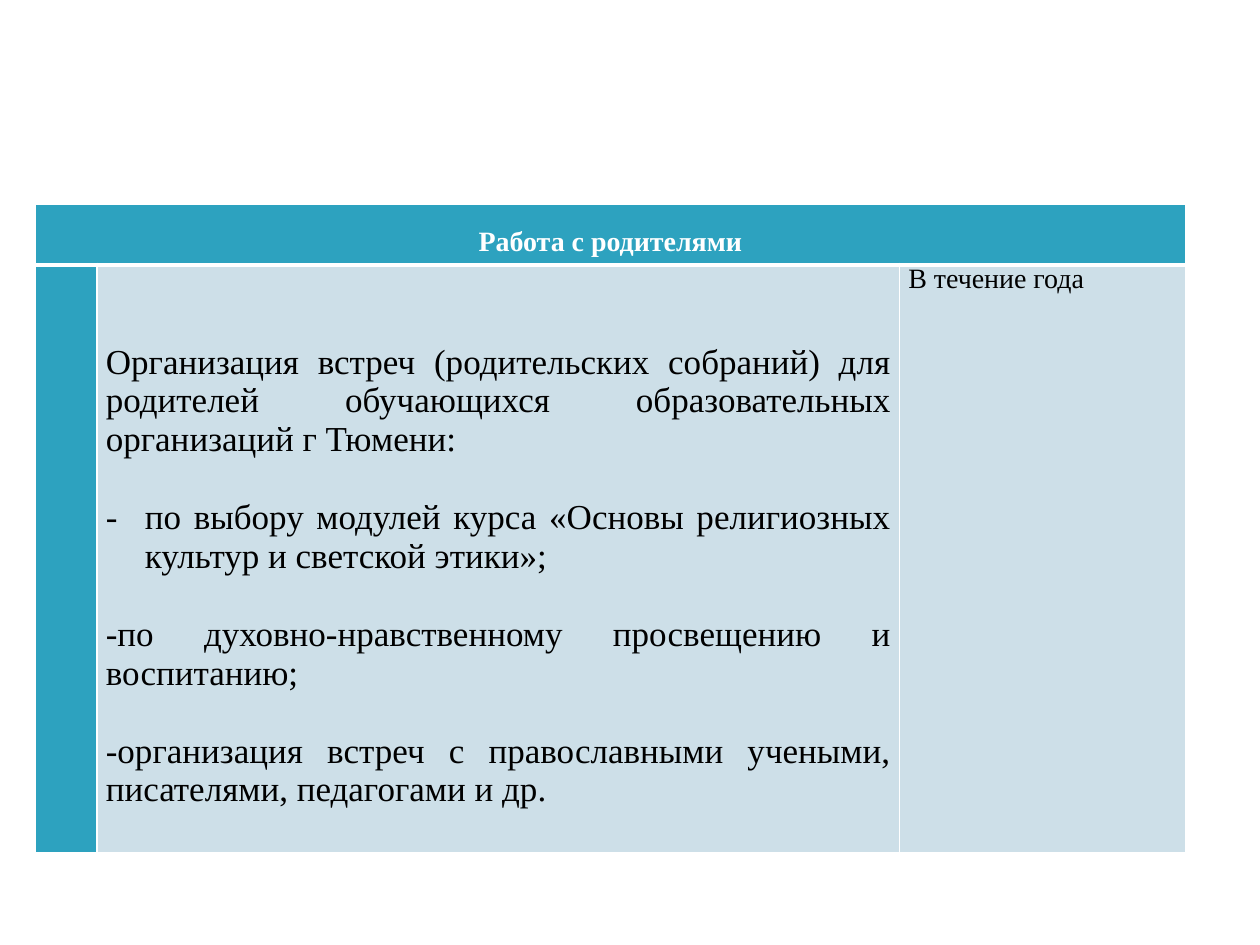
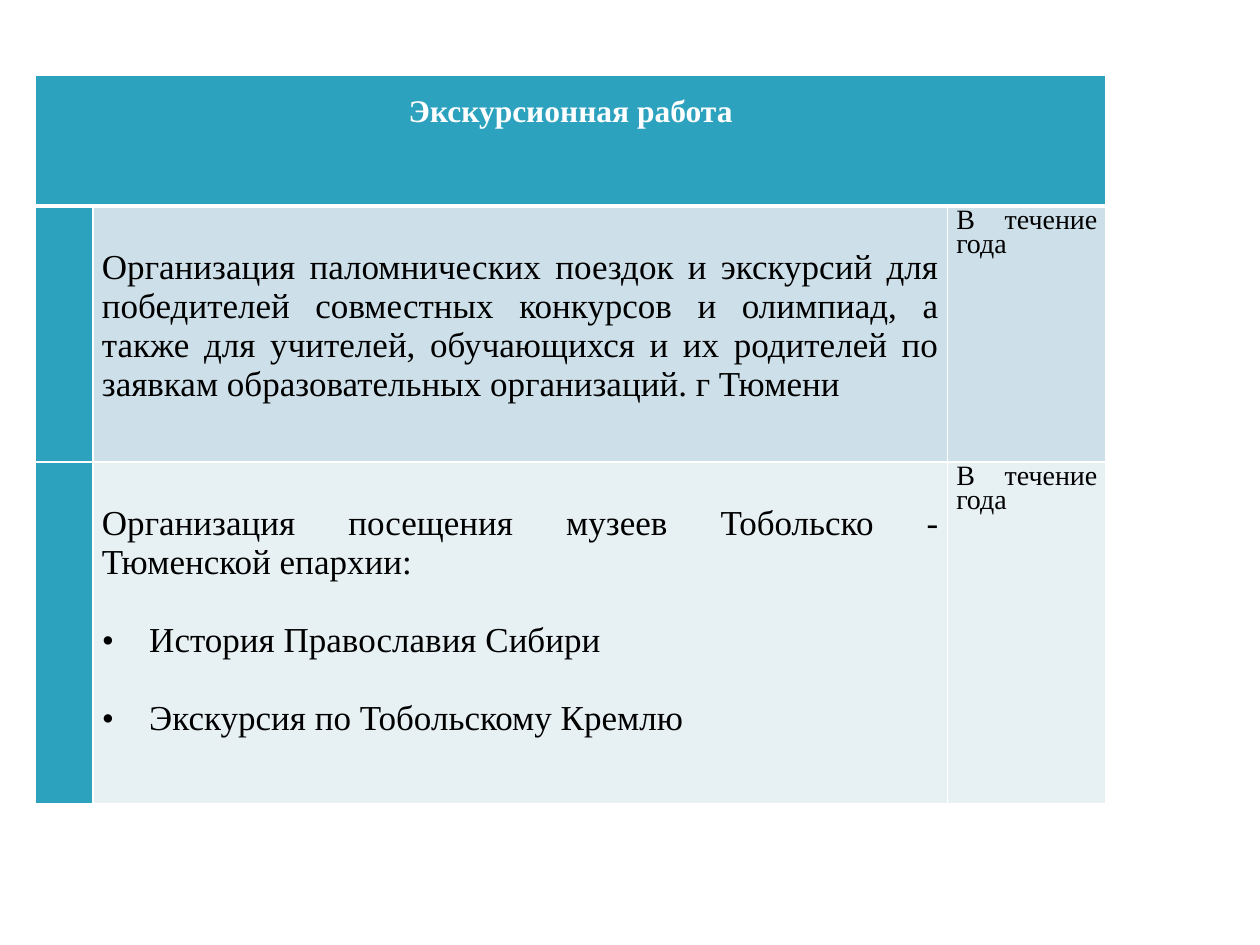
from dataclasses import dataclass

from lxml.etree import SubElement
from pptx import Presentation
from pptx.dml.color import RGBColor
from pptx.enum.text import PP_ALIGN
from pptx.oxml.ns import qn
from pptx.util import Pt


@dataclass(frozen=True)
class Theme:
    font: str = "Times New Roman"
    accent: str = "2DA2BF"
    bands: tuple = ("CDDFE8", "E7F0F3")
    white: str = "FFFFFF"
    black: str = "000000"
    body_size: float = 20
    period_size: float = 16
    tight_line: float = 13.4
    paragraph_gap: float = 22.3
    thin_border: float = 0.96
    header_border: float = 3
    side_margin: float = 5.04
    edge_margin: float = 3.6
    header_margin: float = 17


THEME = Theme()
TABLE_LEFT = 20.16
PERIOD = "В течение года"


@dataclass(frozen=True)
class Bullet:
    text: str
    mark: str
    indent: float


def apply_format(target, values):
    for name, value in values.items():
        setattr(target, name, value)


def add_border(cell, side, width):
    properties = cell._tc.get_or_add_tcPr()
    line = SubElement(properties, qn(f"a:{side}"), w=str(Pt(width)))
    fill = SubElement(line, qn("a:solidFill"))
    SubElement(fill, qn("a:srgbClr"), val=THEME.white)


def style_cell(cell, color, top_width, bottom_width, margin_top):
    apply_format(cell, {
        "margin_left": Pt(THEME.side_margin),
        "margin_right": Pt(THEME.side_margin),
        "margin_top": Pt(margin_top),
        "margin_bottom": Pt(THEME.edge_margin),
    })
    widths = {"lnL": THEME.thin_border, "lnR": THEME.thin_border,
              "lnT": top_width, "lnB": bottom_width}
    for side, width in widths.items():
        add_border(cell, side, width)
    cell.fill.solid()
    cell.fill.fore_color.rgb = RGBColor.from_string(color)


def add_bullet(para, bullet):
    properties = para._p.get_or_add_pPr()
    properties.set("marL", str(Pt(bullet.indent)))
    properties.set("indent", str(-Pt(bullet.indent)))
    color = SubElement(properties, qn("a:buClr"))
    SubElement(color, qn("a:srgbClr"), val=THEME.black)
    SubElement(properties, qn("a:buFont"), typeface=THEME.font)
    SubElement(properties, qn("a:buChar"), char=bullet.mark)


def write_paragraph(para, text, size, color=THEME.black, bold=False, **layout):
    apply_format(para, {"alignment": PP_ALIGN.JUSTIFY, **layout})
    span = para.add_run()
    span.text = text
    apply_format(span.font, {"name": THEME.font, "size": Pt(size), "bold": bold})
    span.font.color.rgb = RGBColor.from_string(color)


def write_body(cell, items):
    frame = cell.text_frame
    for index, item in enumerate(items):
        para = frame.add_paragraph() if index else frame.paragraphs[0]
        text = item
        if isinstance(item, Bullet):
            add_bullet(para, item)
            text = item.text
        layout = {"space_before": Pt(THEME.paragraph_gap)} if index else {}
        write_paragraph(para, text, THEME.body_size, **layout)


def add_plan_table(page, top, widths, heights, title, title_size, bodies, body_margin):
    frame = page.shapes.add_table(
        len(heights), len(widths), Pt(TABLE_LEFT), Pt(top),
        Pt(sum(widths)), Pt(sum(heights)))
    table = frame.table
    apply_format(table, {"first_row": False, "horz_banding": False})
    for column, width in zip(table.columns, widths):
        column.width = Pt(width)
    for row, height in zip(table.rows, heights):
        row.height = Pt(height)

    for cell in table.rows[0].cells:
        style_cell(cell, THEME.accent, THEME.thin_border,
                   THEME.header_border, THEME.header_margin)
    header = table.cell(0, 0)
    header.merge(table.cell(0, len(widths) - 1))
    write_paragraph(header.text_frame.paragraphs[0], title, title_size, THEME.white, True,
                    alignment=PP_ALIGN.CENTER, line_spacing=Pt(THEME.tight_line))

    for index, items in enumerate(bodies):
        band = THEME.bands[index % 2]
        top_width = THEME.thin_border if index else THEME.header_border
        number, body, period = table.rows[index + 1].cells
        for cell, color, margin in ((number, THEME.accent, THEME.edge_margin),
                                    (body, band, body_margin),
                                    (period, band, THEME.edge_margin)):
            style_cell(cell, color, top_width, THEME.thin_border, margin)
        write_body(body, items)
        write_paragraph(period.text_frame.paragraphs[0], PERIOD, THEME.period_size,
                        line_spacing=Pt(THEME.tight_line))


def add_page(deck):
    return deck.slides.add_slide(deck.slide_layouts[6])


def main():
    deck = Presentation()
    apply_format(deck, {"slide_width": Pt(720), "slide_height": Pt(540)})

    add_plan_table(
        add_page(deck), 116.9, (35.3, 458.6, 163.4), (34.5, 336),
        "Работа с родителями", 16,
        [[
            "Организация встреч (родительских собраний) для родителей "
            "обучающихся образовательных организаций г Тюмени:",
            Bullet("по выбору модулей курса «Основы религиозных культур "
                   "и светской этики»;", "-", 22.3),
            "-по духовно-нравственному просвещению и воспитанию;",
            "-организация встреч с православными учеными, писателями, педагогами и др.",
        ]], 44.5)

    add_plan_table(
        add_page(deck), 43.2, (33.1, 488.2, 90.7), (74.6, 146.2, 195.1),
        "Экскурсионная работа", 18,
        [[
            "Организация паломнических поездок и экскурсий для победителей "
            "совместных конкурсов и олимпиад, а также для учителей, обучающихся "
            "и их родителей по заявкам образовательных организаций. г Тюмени",
        ], [
            "Организация посещения музеев Тобольско - Тюменской епархии:",
            Bullet("История Православия Сибири", "•", 27),
            Bullet("Экскурсия по Тобольскому Кремлю", "•", 27),
        ]], 24.3)

    deck.save("out.pptx")


if __name__ == "__main__":
    main()
